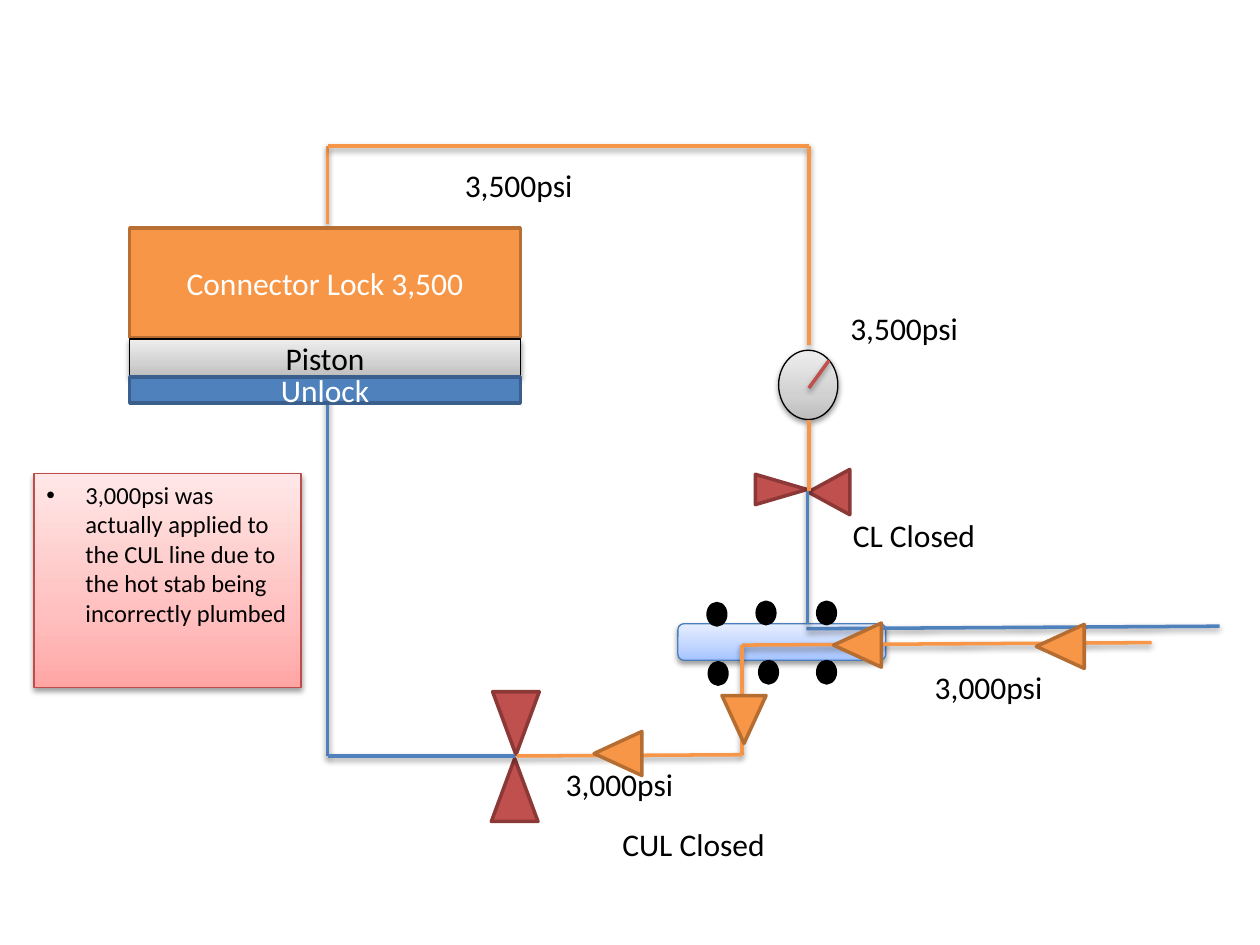
from copy import deepcopy
from dataclasses import dataclass
from typing import NamedTuple, Optional

from lxml import etree
from pptx import Presentation, util as u
from pptx.dml.color import RGBColor
from pptx.enum import shapes, text
from pptx.oxml.ns import qn

COLUMNS, ROWS = 100, 75  # page grid
WIDTH, HEIGHT = u.Inches(10), u.Inches(7.5)
Kind = shapes.MSO_SHAPE


class Paint(NamedTuple):
    fill: tuple  # one colour, or three from bottom to top
    line: str
    weight: float = 2


@dataclass(frozen=True)
class Theme:
    font: str = "Calibri"
    body: int = 18
    note_size: int = 14
    ink: str = "000000"
    paper: str = "FFFFFF"
    high: str = "F79646"
    low: str = "4F81BD"
    needle: str = "C0504D"
    lock: Paint = Paint(("F79646",), "B76F34")
    unlock: Paint = Paint(("4F81BD",), "3A5F8C")
    valve: Paint = Paint(("C0504D",), "8C3836")
    arrow: Paint = Paint(("F79646",), "B66D31")
    port: Paint = Paint(("000000",), "000000")
    metal: Paint = Paint(("BDBDBD", "D1D1D1", "EEEEEE"), "000000", 0.75)
    manifold: Paint = Paint(("A4C4FF", "BFD4FF", "E6EEFF"), "4B7EBC", 0.75)
    note: Paint = Paint(("FFA6A5", "FFC0BF", "FFE7E7"), "BF4C48", 0.75)


class Box(NamedTuple):
    left: float
    top: float
    width: float
    height: float


class Pipe(NamedTuple):
    color: str
    points: tuple


class Block(NamedTuple):
    words: str
    box: Box
    paint: Paint
    ink: str


THEME = Theme()


def across(columns: float) -> int:
    return round(WIDTH * columns / COLUMNS)


def down(rows: float) -> int:
    return round(HEIGHT * rows / ROWS)


def frame(box: Box) -> tuple:
    return across(box.left), down(box.top), across(box.width), down(box.height)


def add_shadow(item) -> None:
    effects = etree.SubElement(item._element.spPr, qn("a:effectLst"))
    shadow = etree.SubElement(effects, qn("a:outerShdw"), blurRad="40000",
                              dist="20000", dir="5400000", rotWithShape="0")
    color = etree.SubElement(shadow, qn("a:srgbClr"), val=THEME.ink)
    etree.SubElement(color, qn("a:alpha"), val="38000")


def add_figure(page, kind, box: Box, paint: Paint, turn: float = 0):
    figure = page.shapes.add_shape(kind, *frame(box))
    figure.rotation = turn
    figure.line.color.rgb = RGBColor.from_string(paint.line)
    figure.line.width = u.Pt(paint.weight)
    if len(paint.fill) == 1:
        figure.fill.solid()
        figure.fill.fore_color.rgb = RGBColor.from_string(paint.fill[0])
        figure.shadow.inherit = False
        return figure
    # Three-stop gradient, always with a soft shadow
    figure.fill.gradient()
    figure.fill.gradient_angle = 90
    stops = figure._element.spPr.find(".//" + qn("a:gsLst"))
    stops.insert(1, deepcopy(stops[0]))
    for stop, color, place in zip(figure.fill.gradient_stops, paint.fill, (0, 0.35, 1)):
        stop.color.rgb = RGBColor.from_string(color)
        stop.position = place
    add_shadow(figure)
    return figure


def write(item, words: str, size: int, ink: str,
          align=text.PP_ALIGN.LEFT, anchor: Optional[text.MSO_ANCHOR] = text.MSO_ANCHOR.TOP):
    item.text_frame.word_wrap = True
    item.text_frame.vertical_anchor = anchor
    para = item.text_frame.paragraphs[0]
    para.alignment = align
    span = para.add_run()
    span.text = words
    span.font.name = THEME.font
    span.font.size = u.Pt(size)
    span.font.color.rgb = RGBColor.from_string(ink)
    return para


def add_pipe(page, pipe: Pipe) -> None:
    for (x1, y1), (x2, y2) in zip(pipe.points, pipe.points[1:]):
        line = page.shapes.add_connector(shapes.MSO_CONNECTOR.STRAIGHT, across(x1),
                                         down(y1), across(x2), down(y2))
        line.line.color.rgb = RGBColor.from_string(pipe.color)
        line.line.width = u.Pt(2)
        add_shadow(line)


def add_label(page, words: str, left: float, top: float) -> None:
    label = page.shapes.add_textbox(*frame(Box(left, top, 18.2, 4)))
    write(label, words, THEME.body, THEME.ink)


def add_block(page, block: Block) -> None:
    figure = add_figure(page, Kind.RECTANGLE, block.box, block.paint)
    write(figure, block.words, THEME.body, block.ink,
          text.PP_ALIGN.CENTER, text.MSO_ANCHOR.MIDDLE)


def add_note(page, words: str, box: Box) -> None:
    para = write(add_figure(page, Kind.RECTANGLE, box, THEME.note),
                 words, THEME.note_size, THEME.ink)
    props = para._p.get_or_add_pPr()
    props.set("marL", str(u.Inches(0.31)))
    props.set("indent", str(-u.Inches(0.31)))
    etree.SubElement(props, qn("a:buFont"), typeface="Arial")
    etree.SubElement(props, qn("a:buChar"), char="•")


PIPES = (
    Pipe(THEME.high, ((26, 17.8), (26, 11.6), (64.2, 11.6), (64.2, 27.4))),
    Pipe(THEME.low, ((26, 30.9), (26, 60), (40.9, 60))),
    Pipe(THEME.high, ((91.4, 51), (58.9, 51.2), (58.9, 59.9), (41, 60))),
    Pipe(THEME.low, ((96.8, 49.7), (64, 49.9))),
    Pipe(THEME.high, ((64.2, 33.3), (64.2, 39))),
    Pipe(THEME.low, ((64.1, 39), (64.1, 49.5))),
    Pipe(THEME.needle, ((64.2, 30.8), (65.8, 28.6))),
)
VALVES = ((Box(64, 37.4, 3.6, 3.3), 270), (Box(60.8, 36.8, 2.4, 4.1), 90),
          (Box(39, 60.2, 3.7, 5), 0), (Box(39.1, 54.9, 3.7, 5), 180))
PORTS = ((56.2, 47.9), (60.1, 47.8), (64.9, 47.8),
         (56.3, 52.6), (60.3, 52.5), (64.9, 52.5))
ARROWS = ((82.4, 49.4, 270), (66.3, 49.3, 270), (47.3, 57.9, 270), (57.3, 55.2, 180))
LABELS = (("CUL Closed", 48.4, 65), ("CL Closed", 66.7, 40.5),
          ("3,500psi", 66.5, 24), ("3,000psi", 73.2, 52.5),
          ("3,500psi", 35.9, 12.7), ("3,000psi", 43.9, 60.2))
BLOCKS = (
    Block("Connector Lock 3,500", Box(10.3, 18.1, 31, 8.7), THEME.lock, THEME.paper),
    Block("Piston", Box(10.3, 26.9, 31, 3), THEME.metal, THEME.ink),
    Block("Unlock", Box(10.3, 29.9, 31, 2.1), THEME.unlock, THEME.paper),
)


def main() -> None:
    deck = Presentation()
    deck.slide_width, deck.slide_height = WIDTH, HEIGHT
    page = deck.slides.add_slide(deck.slide_layouts[6])

    # Gauge, valves and manifold with its ports
    add_figure(page, Kind.OVAL, Box(61.8, 27.8, 4.7, 5.5), THEME.metal)
    for box, turn in VALVES:
        add_figure(page, Kind.ISOSCELES_TRIANGLE, box, THEME.valve, turn)
    add_figure(page, Kind.ROUNDED_RECTANGLE, Box(53.8, 49.5, 16.5, 2.9), THEME.manifold)
    for left, top in PORTS:
        add_figure(page, Kind.OVAL, Box(left, top, 1.4, 1.7), THEME.port)

    # Pipes, gauge needle and labels
    for pipe in PIPES:
        add_pipe(page, pipe)
    for words, left, top in LABELS:
        add_label(page, words, left, top)

    # Note, flow arrows and connector blocks
    add_note(page, "3,000psi was actually applied to the CUL line due to the hot stab "
                   "being incorrectly plumbed", Box(2.7, 37.6, 21.2, 17))
    for left, top, turn in ARROWS:
        add_figure(page, Kind.ISOSCELES_TRIANGLE, Box(left, top, 3.5, 3.8), THEME.arrow, turn)
    for block in BLOCKS:
        add_block(page, block)

    deck.save("out.pptx")


if __name__ == "__main__":
    main()
